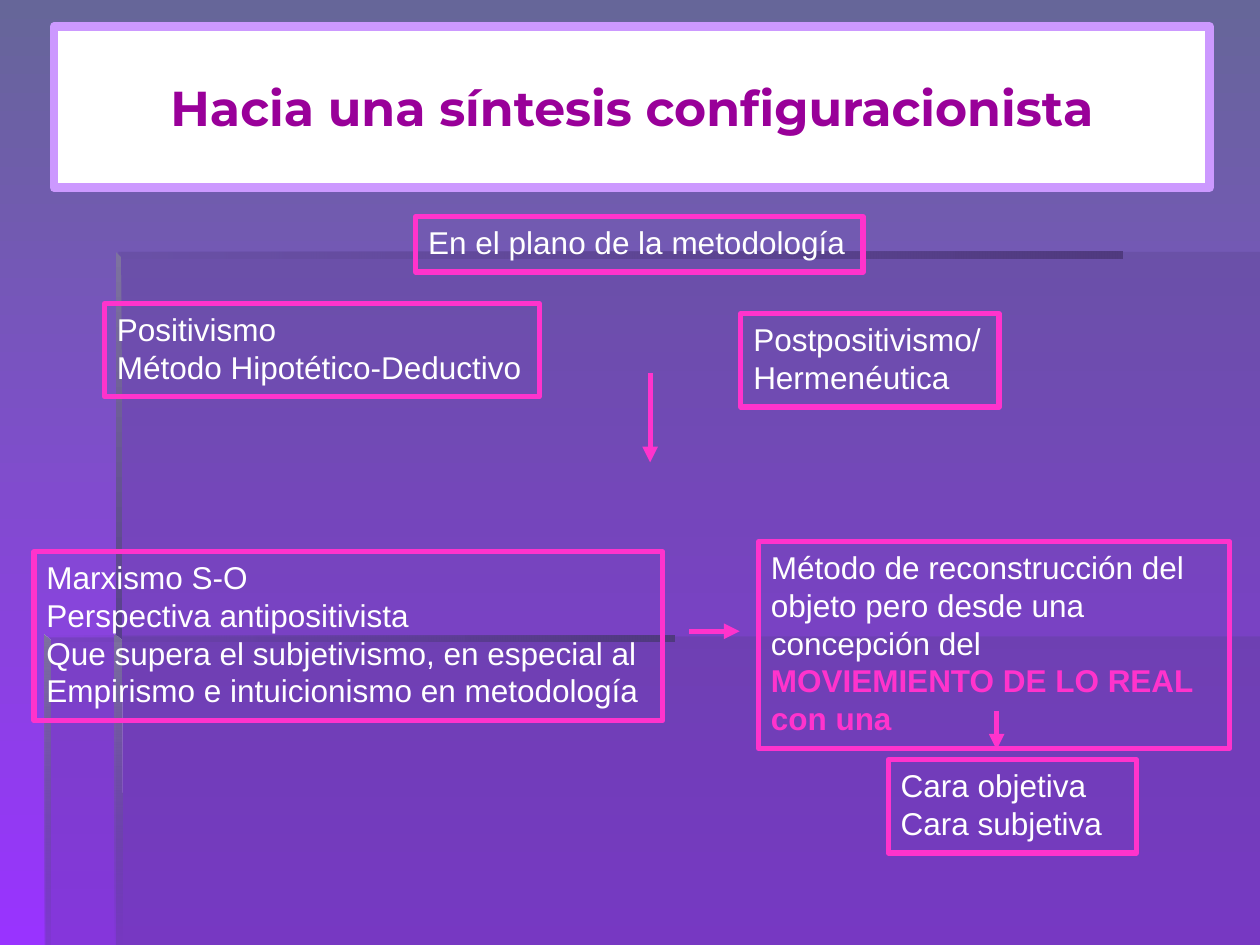
import pptx
import pptx.util
import pptx.dml.color
import pptx.enum.shapes
import pptx.enum.text
import pptx.oxml
import pptx.oxml.ns
from dataclasses import dataclass

PX = 9144
ALIGN = pptx.enum.text.PP_ALIGN
ANCHOR = pptx.enum.text.MSO_ANCHOR
FIT = pptx.enum.text.MSO_AUTO_SIZE


@dataclass(frozen=True)
class Theme:
    sky: str = "666699"
    violet: str = "9933FF"
    shade: str = "573F8B"
    edge: str = "503A7F"
    mist: str = "7D729F"
    white: str = "FFFFFF"
    lilac: str = "CC99FF"
    purple: str = "990099"
    pink: str = "FF33CC"
    title_font: str = "Montserrat"
    body_font: str = "Arial"
    title_size: int = 28
    body_size: int = 18
    title_line: int = 5
    body_line: int = 3


def rgb(value):
    return pptx.dml.color.RGBColor.from_string(value)


def apply(target, values):
    for name, value in values.items():
        setattr(target, name, value)


class Deck:
    """Draws themed elements on the current slide, in px of 1/100 inch."""

    def __init__(self, theme):
        self.theme = theme
        self.prs = pptx.Presentation()
        apply(self.prs, {"slide_width": 1000 * PX, "slide_height": 750 * PX})
        self.s = self.prs.slides.add_slide(self.prs.slide_layouts[6])

    def gradient(self, fill, colors, angle):
        fill.gradient()
        fill.gradient_angle = angle
        for stop, color in zip(fill.gradient_stops, colors):
            stop.color.rgb = rgb(color)

    def panel(self, points, colors, opacity, angle=0):
        builder = self.s.shapes.build_freeform(*points[0], scale=PX)
        builder.add_line_segments(points[1:], close=True)
        sp = builder.convert_to_shape()
        sp.shadow.inherit = False
        sp.line.fill.background()
        if len(colors) == 1:
            sp.fill.solid()
            sp.fill.fore_color.rgb = rgb(colors[0])
        else:
            self.gradient(sp.fill, colors, angle)
        clrs = list(sp._element.spPr.iter(pptx.oxml.ns.qn("a:srgbClr")))
        for clr, percent in zip(clrs, opacity):
            if percent < 100:
                alpha = pptx.oxml.parse_xml(f"<a:alpha {pptx.oxml.ns.nsdecls('a')}/>")
                alpha.set("val", str(percent * 1000))
                clr.append(alpha)

    def stroke(self, line, color, width):
        line.color.rgb = rgb(color)
        line.width = pptx.util.Pt(width)

    def frame(self, box, line, width, fill=None):
        kind = pptx.enum.shapes.MSO_SHAPE.RECTANGLE
        sp = self.s.shapes.add_shape(kind, *(v * PX for v in box))
        sp.shadow.inherit = False
        self.stroke(sp.line, line, width)
        if fill:
            sp.fill.solid()
            sp.fill.fore_color.rgb = rgb(fill)
        else:
            sp.fill.background()
        return sp.text_frame

    def text(self, tf, lines, align, fonts):
        for i, (line, font) in enumerate(zip(lines, fonts)):
            p = tf.add_paragraph() if i else tf.paragraphs[0]
            p.alignment = align
            r = p.add_run()
            r.text = line
            values = dict(font)
            r.font.color.rgb = rgb(values.pop("color"))
            apply(r.font, values)

    def title(self, box, line):
        t = self.theme
        tf = self.frame(box, t.lilac, t.title_line, t.white)
        apply(tf, {"word_wrap": True, "vertical_anchor": ANCHOR.MIDDLE})
        font = {"name": t.title_font, "size": pptx.util.Pt(t.title_size),
                "bold": True, "color": t.purple}
        self.text(tf, [line], ALIGN.CENTER, [font])

    def note(self, box, lines, wrap=False, accent=()):
        t = self.theme
        tf = self.frame(box, t.pink, t.body_line)
        apply(tf, {"word_wrap": wrap, "vertical_anchor": ANCHOR.TOP,
                   "auto_size": FIT.SHAPE_TO_FIT_TEXT})
        plain = {"name": t.body_font, "size": pptx.util.Pt(t.body_size),
                 "color": t.white}
        strong = {**plain, "color": t.pink, "bold": True}
        fonts = [strong if i in accent else plain for i in range(len(lines))]
        self.text(tf, lines, ALIGN.LEFT, fonts)

    def arrow(self, *ends):
        kind = pptx.enum.shapes.MSO_CONNECTOR.STRAIGHT
        sp = self.s.shapes.add_connector(kind, *(v * PX for v in ends))
        self.stroke(sp.line, self.theme.pink, self.theme.body_line)
        ns = pptx.oxml.ns.nsdecls("a")
        ln = sp.line._get_or_add_ln()
        ln.append(pptx.oxml.parse_xml(f'<a:tailEnd {ns} type="triangle"/>'))
        sp._element.spPr.append(pptx.oxml.parse_xml(f"<a:effectLst {ns}/>"))


def main():
    t = Theme()
    d = Deck(t)
    d.gradient(d.s.background.fill, (t.sky, t.violet), 270)

    d.panel([(92, 505), (92, 750), (1000, 750), (1000, 505)], [t.shade], [30])
    d.panel([(94, 506), (36, 506), (36, 750), (1000, 750), (1000, 200), (94, 200)],
            [t.shade], [30])
    across, down = (t.shade, t.edge), (t.mist, t.shade)
    d.panel([(92, 200), (92, 205), (891, 205), (891, 200)], across, (0, 100))
    d.panel([(92, 200), (92, 510), (97, 510), (96, 204)], down, (100, 100), 270)
    d.panel([(91, 750), (97, 750), (96, 508), (91, 504)], down, (100, 0), 270)
    d.panel([(35, 504), (35, 509), (535, 509), (535, 504)], across, (0, 100))
    d.panel([(35, 504), (35, 750), (40, 750), (40, 509)], down, (100, 10), 270)

    d.title((43, 21, 917, 128), "Hacia una síntesis configuracionista")
    d.note((330, 172, 355, 44), ["En el plano de la metodología"])
    d.note((83, 241, 345, 74), ["Positivismo", "Método Hipotético-Deductivo"])
    d.note((588, 249, 205, 74), ["Postpositivismo/", "Hermenéutica"])
    d.arrow(516, 296, 516, 367)
    d.note((27, 438, 499, 134), [
        "Marxismo S-O",
        "Perspectiva antipositivista",
        "Que supera el subjetivismo, en especial al",
        "Empirismo e intuicionismo en metodología",
    ])
    d.arrow(547, 501, 587, 501)
    d.note((602, 430, 374, 164), [
        "Método de reconstrucción del objeto pero desde una concepción del",
        "MOVIEMIENTO DE LO REAL con una",
    ], wrap=True, accent=(1,))
    d.arrow(791, 564, 791, 595)
    d.note((705, 603, 197, 74), ["Cara objetiva", "Cara subjetiva"], wrap=True)
    d.prs.save("out.pptx")


if __name__ == "__main__":
    main()
